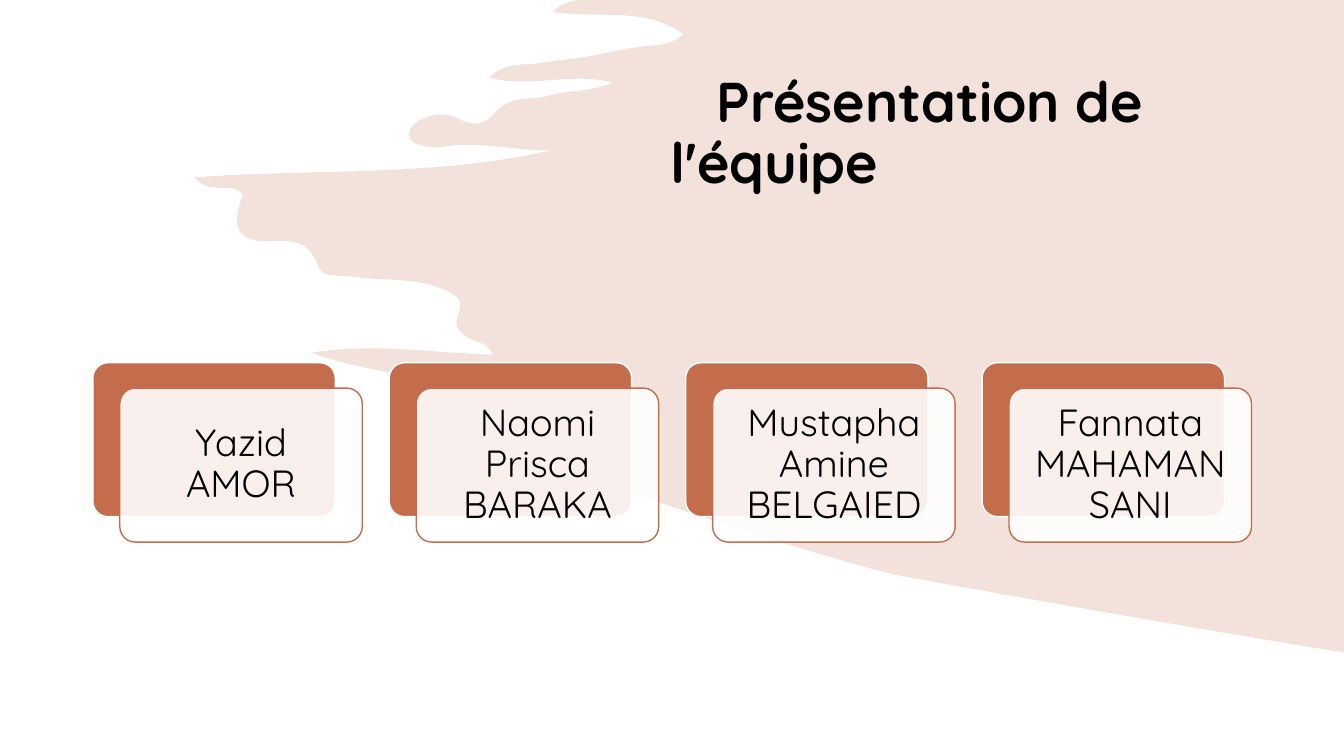
from lxml import etree
from pptx import Presentation
from pptx.dml.color import RGBColor
from pptx.enum.shapes import MSO_SHAPE
from pptx.enum.text import MSO_ANCHOR, MSO_AUTO_SIZE, PP_ALIGN
from pptx.oxml.ns import qn
from pptx.util import Cm, Pt

ROUNDED = MSO_SHAPE.ROUNDED_RECTANGLE
MIDDLE = MSO_ANCHOR.MIDDLE
NO_FIT = MSO_AUTO_SIZE.NONE
LEFT, CENTER = PP_ALIGN.LEFT, PP_ALIGN.CENTER

FONT = "Quicksand"
COLORS = {"terracotta": "C36D4D", "white": "FFFFFF", "text": "000000"}
TEAM = [
    "Yazid AMOR",
    "Naomi Prisca BARAKA",
    "Mustapha Amine BELGAIED",
    "Fannata MAHAMAN SANI",
]

BRUSH_GRID_W, BRUSH_GRID_H = 1333, 750
BRUSH_START = (575, 0)
BRUSH_CURVES = [
    (567, 1), (557, 3), (548, 12), (595, 19), (639, 6), (678, 34),
    (664, 47), (648, 44), (632, 47), (616, 49), (600, 53), (584, 56),
    (567, 59), (549, 60), (532, 63), (518, 65), (502, 61), (485, 77),
    (527, 88), (566, 71), (608, 82), (584, 92), (563, 89), (544, 95),
    (527, 100), (506, 94), (492, 111), (481, 124), (469, 126), (455, 118),
    (442, 111), (428, 113), (415, 120), (411, 123), (406, 126), (406, 132),
    (406, 141), (412, 143), (418, 144), (424, 146), (431, 147), (437, 146),
    (474, 139), (510, 150), (547, 149), (431, 176), (314, 167), (193, 176),
    (209, 195), (229, 179), (241, 193), (230, 222), (234, 237), (258, 239),
    (280, 241), (304, 231), (316, 265), (320, 276), (341, 273), (355, 275),
    (384, 279), (414, 275), (442, 288), (453, 293), (460, 297), (455, 311),
    (449, 325), (456, 330), (466, 336), (473, 340), (483, 339), (489, 352),
    (428, 350), (369, 340), (309, 350), (375, 374), (447, 373), (512, 402),
    (510, 412), (495, 407), (494, 422), (528, 438), (569, 427), (605, 450),
    (584, 461), (565, 444), (545, 454), (552, 469), (840, 561), (892, 571),
    (978, 587), (1195, 625), (1318, 645),
]
BRUSH_CORNERS = [(1333, 647), (1333, 0)]


def rgb(name):
    return RGBColor.from_string(COLORS[name])


def fill_shape(sp, color, opacity=100):
    sp.shadow.inherit = False
    sp.fill.solid()
    sp.fill.fore_color.rgb = rgb(color)
    if opacity < 100:
        clr = sp._element.spPr.find(qn("a:solidFill"))[0]
        etree.SubElement(clr, qn("a:alpha")).set("val", str(opacity * 1000))


def format_text(p, size, align, bold=False):
    p.alignment = align
    p.line_spacing = 0.9
    for r in p.runs:
        r.font.name = FONT
        r.font.size = Pt(size)
        r.font.bold = bold
        r.font.color.rgb = rgb("text")


def bend_segments(sp, count):
    segments = list(sp._element.iter(qn("a:lnTo")))[:count]
    for i in range(0, count, 3):
        curve = etree.Element(qn("a:cubicBezTo"))
        segments[i].addprevious(curve)
        for segment in segments[i:i + 3]:
            curve.append(segment[0])
            segment.getparent().remove(segment)


def add_brush(slide, x, y, w, h):
    points = [(x + px * w / BRUSH_GRID_W, y + py * h / BRUSH_GRID_H)
              for px, py in [BRUSH_START] + BRUSH_CURVES + BRUSH_CORNERS]
    builder = slide.shapes.build_freeform(*points[0])
    builder.add_line_segments(points[1:], close=True)
    sp = builder.convert_to_shape()
    bend_segments(sp, len(BRUSH_CURVES))
    fill_shape(sp, "terracotta", 20)
    sp.line.fill.background()
    slide.shapes._spTree.insert(2, sp._element)


def add_title(slide, x, y, w, h):
    sp = slide.shapes.title
    sp.left, sp.top, sp.width, sp.height = x, y, w, h
    tf = sp.text_frame
    tf.text = "Présentation de l'équipe"
    tf.word_wrap = True
    tf.auto_size = NO_FIT
    tf.vertical_anchor = MIDDLE
    p = tf.paragraphs[0]
    format_text(p, 40, LEFT, bold=True)
    p._p.get_or_add_pPr().set("indent", str(Cm(1.17)))


def add_panel(shapes, x, y, w, h, fill, line, opacity=100):
    sp = shapes.add_shape(ROUNDED, x, y, w, h)
    sp.adjustments[0] = 0.1
    fill_shape(sp, fill, opacity)
    sp.line.color.rgb = rgb(line)
    sp.line.width = Pt(1)


def add_name(shapes, name, x, y, w, h):
    tf = shapes.add_textbox(x, y, w, h).text_frame
    tf.text = name
    tf.word_wrap = True
    tf.vertical_anchor = MIDDLE
    tf.margin_left = tf.margin_right = Cm(0.28)
    tf.margin_top = tf.margin_bottom = Cm(0.28)
    format_text(tf.paragraphs[0], 27, CENTER)


def add_member(shapes, name, x, y, w, h):
    card_x, card_y, inset = x + Cm(0.68), y + Cm(0.64), Cm(0.11)
    add_panel(shapes, x, y, w, h, "terracotta", "white")
    add_panel(shapes, card_x, card_y, w, h, "white", "terracotta", 90)
    add_name(shapes, name, card_x + inset, card_y + inset,
             w - 2 * inset, h - 2 * inset)


def add_team(slide, x, y, pitch, w, h):
    group = slide.shapes.add_group_shape()
    for i, name in enumerate(TEAM):
        add_member(group.shapes, name, x + i * pitch, y, w, h)


def main():
    prs = Presentation()
    prs.slide_width, prs.slide_height = Cm(33.87), Cm(19.05)
    slide = prs.slides.add_slide(prs.slide_layouts[5])
    add_brush(slide, 0, 0, prs.slide_width, prs.slide_height)
    add_title(slide, Cm(16.64), Cm(0.77), Cm(14.88), Cm(5.26))
    add_team(slide, Cm(2.34), Cm(9.14), Cm(7.47), Cm(6.11), Cm(3.88))
    prs.save("out.pptx")


if __name__ == "__main__":
    main()
